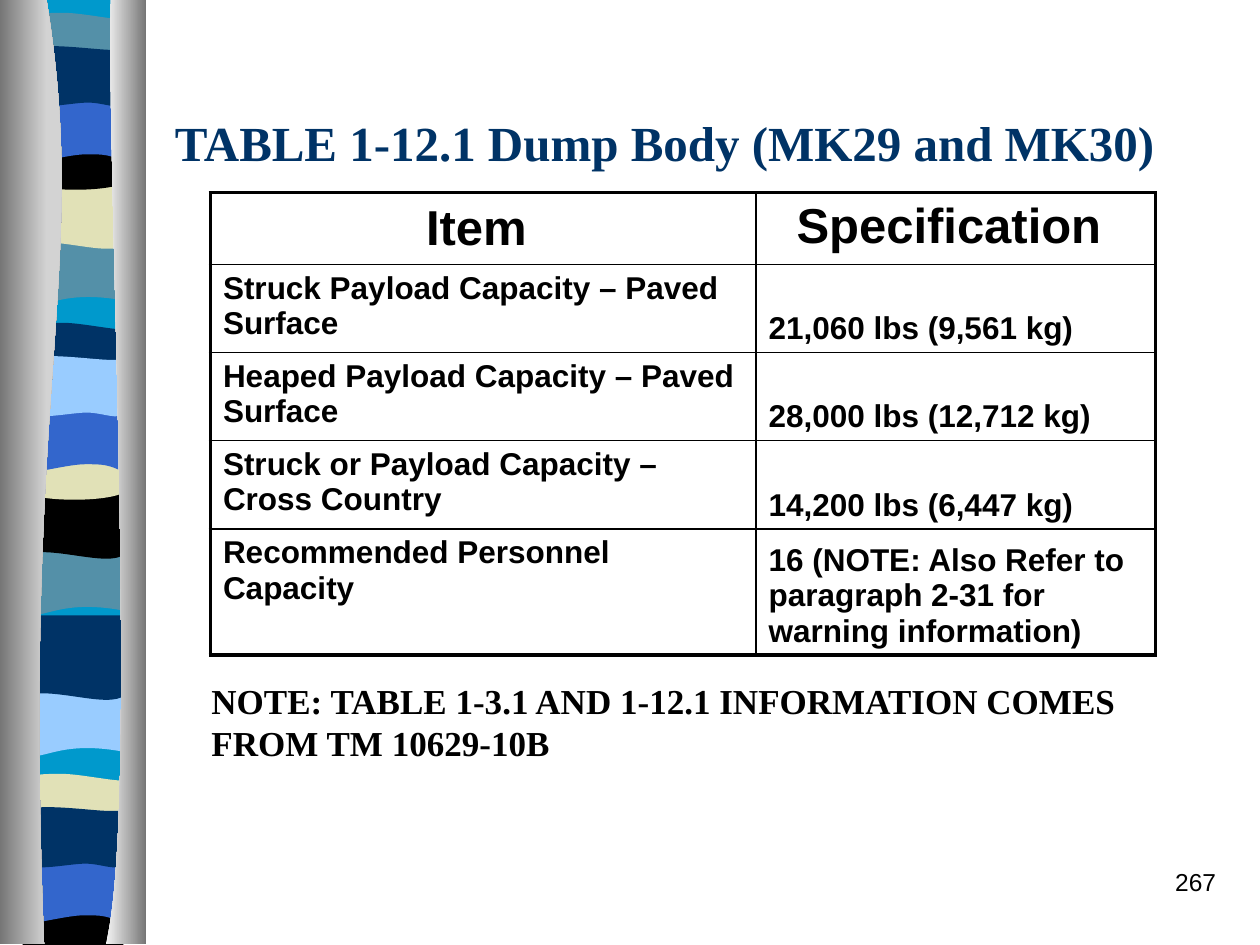
"""Builds the dump body specification slide with its wavy striped margin."""
from lxml import etree
from pptx import Presentation
from pptx.dml.color import RGBColor
from pptx.enum import text
from pptx.oxml import ns
from pptx.util import Inches, Pt

BLACK = RGBColor(0x00, 0x00, 0x00)
NAVY = RGBColor(0x00, 0x33, 0x66)
BLUE = RGBColor(0x33, 0x66, 0xCC)
SKY = RGBColor(0x99, 0xCC, 0xFF)
CYAN = RGBColor(0x00, 0x99, 0xCC)
TEAL = RGBColor(0x54, 0x90, 0xA8)
SAND = RGBColor(0xE1, 0xE1, 0xB7)
GREY = RGBColor(0x76, 0x76, 0x76)
SILVER = RGBColor(0xD3, 0xD3, 0xD3)
PALE = RGBColor(0xF4, 0xF4, 0xF4)

SERIF, SANS = "Times New Roman", "Arial"
LEFT, CENTER, RIGHT = text.PP_ALIGN.LEFT, text.PP_ALIGN.CENTER, text.PP_ALIGN.RIGHT
TOP, MIDDLE, BOTTOM = (text.MSO_ANCHOR.TOP, text.MSO_ANCHOR.MIDDLE,
                       text.MSO_ANCHOR.BOTTOM)
BAND_STRETCH = (0.74, 1.35)

WAVE = [(1.08, 1.85), (1.08, 2.32), (0.33, 2.24, 0.18, 2.4, 0, 2.32), (0, 1.85)]
SAG = [(1.08, 1.4), (1.08, 1.87), (0.9, 1.95, 0.33, 1.82, 0, 1.87), (0, 1.4)]
RIPPLE = [(1.08, 0.2), (1.08, 0.45), (0.9, 0.49, 0.18, 0.49, 0, 0.45), (0, 0.2),
          (0.07, 0.16, 0.24, 0.16, 0.42, 0.16), (0.6, 0.16, 0.94, 0.2, 1.08, 0.2)]
DIP = [(1.08, 1.08), (1.08, 1.4), (0.9, 1.46, 0.18, 1.46, 0, 1.4), (0, 1.08),
       (0.66, 1.13, 0.85, 1.08, 1.08, 1.08)]
CREST = [(1.08, 0.74), (1.08, 1.21), (0.91, 1.16, 0.84, 1.16, 0.66, 1.16),
         (0.48, 1.16, 0.16, 1.21, 0, 1.21), (0, 0.74)]
SWELL = [(1.08, 0.45), (1.08, 0.76), (1.01, 0.81, 0.85, 0.76, 0.67, 0.76),
         (0.49, 0.76, 0.11, 0.81, 0, 0.76), (0, 0.45),
         (0.15, 0.4, 0.74, 0.45, 0.92, 0.45), (1.1, 0.45, 1.05, 0.45, 1.08, 0.45)]
FOOT = [(1.08, 1.08), (1.08, 1.45), (0, 1.45), (0, 1.08),
        (0.66, 1.13, 0.85, 1.08, 1.08, 1.08)]
BASE = [(0.06, 0), (1.14, 0), (1.14, 7.47), (0.06, 7.47)]
LEFT_EDGE = [(0, 0), (0.37, 0), (0.72, 2.16, 0.17, 2.96, 0.35, 7.49), (0, 7.49)]
RIGHT_EDGE = [(1.16, 0), (0.88, 0), (0.84, 1.25, 1.11, 6.46, 0.84, 7.49),
              (1.16, 7.49)]

BAND_GROUPS = [
    (0.06, 0, (WAVE, SAG, RIPPLE, DIP, CREST, SWELL),
     (TEAL, SAND, TEAL, BLACK, BLUE, NAVY)),
    (0.05, 2.46, (WAVE, SAG, RIPPLE, DIP, CREST, SWELL),
     (TEAL, BLACK, NAVY, SAND, BLUE, SKY)),
    (0.05, 3.58, (WAVE, SAG), (SKY, NAVY)),
    (0.04, 6.04, (RIPPLE, FOOT, CREST, SWELL), (SAND, BLACK, BLUE, NAVY)),
]

SPECIFICATIONS = [
    ("Item ", "Specification "),
    ("Struck Payload Capacity – Paved Surface", "21,060 lbs (9,561 kg)"),
    ("Heaped Payload Capacity – Paved Surface", "28,000 lbs (12,712 kg)"),
    ("Struck or Payload Capacity – Cross Country", "14,200 lbs (6,447 kg)"),
    ("Recommended Personnel Capacity",
     "16 (NOTE: Also Refer to paragraph 2-31 for warning information)"),
]


def place_band(profile, dx, dy):
    centers = []
    for axis in (0, 1):
        values = [value for node in profile for value in node[axis::2]]
        centers.append((min(values) + max(values)) / 2)
    return [tuple(centers[i % 2] + (value - centers[i % 2]) * BAND_STRETCH[i % 2]
                  + (dx, dy)[i % 2] for i, value in enumerate(node))
            for node in profile]


def write(frame, content, size=18, font=SANS, color=BLACK, bold=True, align=LEFT):
    paragraph = frame.paragraphs[0]
    paragraph.alignment = align
    run = paragraph.add_run()
    run.text = content
    run.font.size = Pt(size)
    run.font.name = font
    run.font.bold = bold
    run.font.color.rgb = color


class SlideWriter:
    """Holds the current slide and draws each kind of element on it."""

    def __init__(self, slide):
        self.slide = slide

    def outline(self, nodes, *colors):
        nodes = [tuple(map(Inches, node)) for node in nodes]
        builder = self.slide.shapes.build_freeform(*nodes[0], scale=1.0)
        builder.add_line_segments([node[-2:] for node in nodes[1:]], close=True)
        shape = builder.convert_to_shape()
        segments = list(shape._element.iter(ns.qn("a:lnTo")))
        for segment, node in zip(segments, nodes[1:]):
            if len(node) == 6:
                curve = etree.Element(ns.qn("a:cubicBezTo"))
                for x, y in zip(node[::2], node[1::2]):
                    etree.SubElement(curve, ns.qn("a:pt"), x=str(x - shape.left),
                                     y=str(y - shape.top))
                segment.getparent().replace(segment, curve)
        shape.shadow.inherit = False
        shape.line.fill.background()
        if len(colors) == 1:
            shape.fill.solid()
            shape.fill.fore_color.rgb = colors[0]
        else:
            shape.fill.gradient()
            shape.fill.gradient_angle = 0
            for stop, color in zip(shape.fill.gradient_stops, colors):
                stop.color.rgb = color

    def bands(self, dx, dy, profiles, colors):
        for profile, color in zip(profiles, colors):
            self.outline(place_band(profile, dx, dy), color)

    def label(self, content, box, anchor=TOP, **style):
        shape = self.slide.shapes.add_textbox(*map(Inches, box))
        shape.text_frame.word_wrap = True
        shape.text_frame.vertical_anchor = anchor
        write(shape.text_frame, content, **style)

    def borders(self, cell, widths):
        properties = cell._tc.get_or_add_tcPr()
        for position, (side, width) in enumerate(zip("LRTB", widths)):
            line = etree.Element(ns.qn(f"a:ln{side}"), w=str(Pt(width)))
            fill = etree.SubElement(line, ns.qn("a:solidFill"))
            etree.SubElement(fill, ns.qn("a:srgbClr"), val=str(BLACK))
            properties.insert(position, line)

    def table(self, rows, box, column_widths, row_height):
        last_row, last_column = len(rows) - 1, len(column_widths) - 1
        frame = self.slide.shapes.add_table(
            len(rows), len(column_widths), *map(Inches, box))
        table = frame.table
        table.first_row = table.horz_banding = False
        for column, width in zip(table.columns, column_widths):
            column.width = Inches(width)
        for r, row in enumerate(rows):
            table.rows[r].height = Inches(row_height)
            for c, content in enumerate(row):
                cell = table.cell(r, c)
                cell.fill.background()
                if r == 0:
                    cell.vertical_anchor = TOP if c else MIDDLE
                    write(cell.text_frame, content, size=28, align=CENTER)
                else:
                    cell.vertical_anchor = BOTTOM if c else TOP
                    write(cell.text_frame, content)
                outer = (c == 0, c == last_column, r == 0, r == last_row)
                self.borders(cell, [2.25 if edge else 1 for edge in outer])
        frame.height = Inches(box[3])


def main():
    presentation = Presentation()
    presentation.slide_width, presentation.slide_height = Inches(10), Inches(7.5)
    writer = SlideWriter(presentation.slides.add_slide(presentation.slide_layouts[6]))

    writer.outline(BASE, CYAN)
    for group in BAND_GROUPS:
        writer.bands(*group)
    writer.outline(LEFT_EDGE, GREY, SILVER)
    writer.outline(RIGHT_EDGE, PALE, GREY)

    writer.label("TABLE 1-12.1 Dump Body (MK29 and MK30)", (1.29, 0.5, 8.5, 1.25),
                 anchor=MIDDLE, size=28, font=SERIF, color=NAVY)
    writer.table(SPECIFICATIONS, (1.67, 1.53, 7.5, 3.67), (4.33, 3.17), 0.56)
    writer.label("NOTE: TABLE 1-3.1 AND 1-12.1 INFORMATION COMES FROM TM 10629-10B",
                 (1.58, 5.34, 7.5, 1.1), size=20, font=SERIF)
    writer.label("267", (7.67, 6.83, 2.08, 0.5), size=14, bold=False, align=RIGHT)
    presentation.save("out.pptx")


if __name__ == "__main__":
    main()
